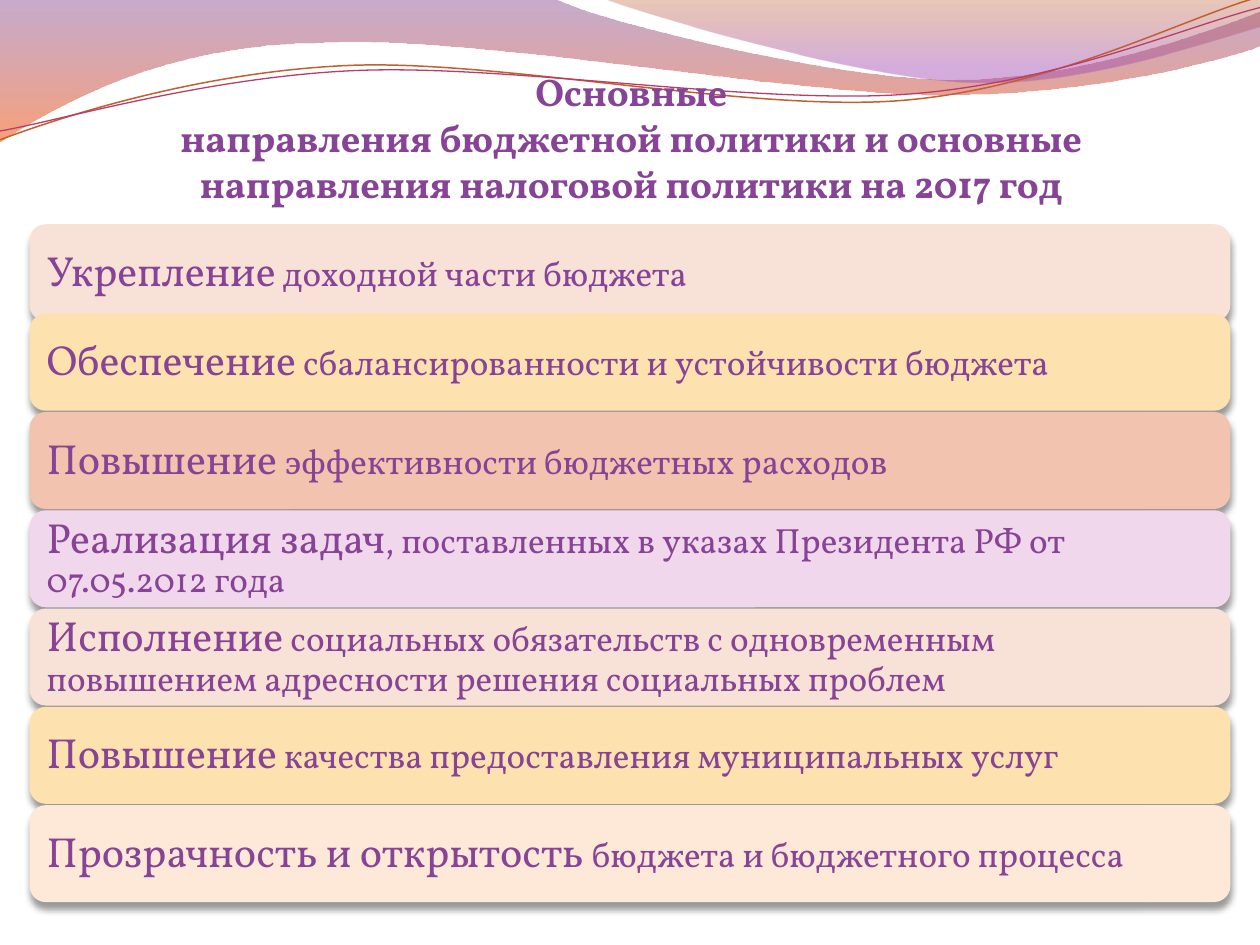
from lxml import etree
from pptx import Presentation
from pptx.dml.color import RGBColor
from pptx.enum.shapes import MSO_SHAPE as Shape
from pptx.enum.text import MSO_ANCHOR as Anchor, PP_ALIGN as Align
from pptx.oxml.ns import qn
from pptx.util import Inches, Pt

FONT = "Vollkorn"
PURPLE = RGBColor(0x87, 0x43, 0x96)
VIOLET = RGBColor(0x83, 0x45, 0x91)
ORANGE = RGBColor(0xF3, 0x53, 0x07)
RUST = RGBColor(0xB7, 0x49, 0x15)
ORCHID = RGBColor(0xA1, 0x4B, 0xB4)
COPPER = RGBColor(0xC4, 0x5F, 0x30)
RASPBERRY = RGBColor(0xB8, 0x3D, 0x68)
BLUSH = RGBColor(0xF8, 0xE2, 0xD7)
SAND = RGBColor(0xFD, 0xE2, 0xB0)
SALMON = RGBColor(0xF2, 0xC4, 0xAF)
LILAC = RGBColor(0xF1, 0xD7, 0xEC)
CREAM = RGBColor(0xFE, 0xE8, 0xD8)

TITLE = ("Основные\vнаправления бюджетной политики и основные "
         "направления налоговой политики на 2017 год")

# Emphasised opening, remainder, card colour
PRIORITIES = [
    ("Укрепление", " доходной части бюджета", BLUSH),
    ("Обеспечение", " сбалансированности и устойчивости бюджета", SAND),
    ("Повышение ", "эффективности бюджетных расходов", SALMON),
    ("Реализация задач", ", поставленных в указах Президента РФ от 07.05.2012 года", LILAC),
    ("Исполнение", " социальных обязательств с одновременным повышением "
                   "адресности решения социальных проблем", BLUSH),
    ("Повышение", " качества предоставления муниципальных услуг", SAND),
    ("Прозрачность и открытость ", "бюджета и бюджетного процесса", CREAM),
]

# Each outline: start point, then points (2 numbers) or Bezier curves (6 numbers).
# Gradient stops: position, colour, opacity in percent.
WAVE_BANDS = [
    ([(0, -0.01), (4.4, -0.01), (4.76, 0.17, 6.64, 0.63, 7.58, 0.63),
      (8.53, 0.63, 9.58, 0.26, 10, 0.09), (10.01, 0.36),
      (9.83, 0.44, 8.7, 0.76, 7.46, 0.75), (6.22, 0.75, 3.82, 0.28, 2.57, 0.34),
      (1.29, 0.35, 0.46, 0.83, -0.01, 1.13)],
     [(0, VIOLET, 45), (1, ORANGE, 55)]),
    ([(4.79, -0.01), (5.09, 0.11, 6.82, 0.62, 7.69, 0.65),
      (8.56, 0.69, 9.61, 0.32, 10, 0.21), (10, 0)],
     [(0, RUST, 30), (0.8, ORCHID, 45)]),
]
WAVE_LINES = [
    ([(0, 1.11), (0.48, 0.93, 1.58, 0.57, 2.77, 0.52),
      (3.95, 0.47, 5.93, 0.89, 7.13, 0.8), (8.33, 0.71, 9.38, 0.15, 9.98, -0.02)],
     COPPER, 0.85),
    ([(0, 1.04), (0.47, 0.96, 1.64, 0.61, 2.83, 0.56),
      (4.03, 0.51, 5.97, 0.83, 7.17, 0.75), (8.36, 0.67, 9.41, 0.21, 10, 0.06)],
     RASPBERRY, 0.75),
]

SLIDE_WIDTH, SLIDE_HEIGHT = 10, 7.5
CARD_WIDTH, CARD_HEIGHT = 9.53, 0.77
CARD_LEFT = (SLIDE_WIDTH - CARD_WIDTH) / 2
FIRST_TOP, SECOND_TOP, CARD_PITCH = 1.78, 2.49, 0.78


def add_outline(slide, outline, close):
    """Build a freeform through the end points, then bend its curved segments."""
    start, *ends = [(Inches(part[-2]), Inches(part[-1])) for part in outline]
    builder = slide.shapes.build_freeform(*start)
    builder.add_line_segments(ends, close=close)
    shape = builder.convert_to_shape()
    shape.shadow.inherit = False
    segments = list(shape.element.spPr.iter(qn("a:lnTo")))
    for segment, part in zip(segments, outline[1:]):
        if len(part) == 6:
            segment.addprevious(make_curve(shape, part))
            segment.getparent().remove(segment)
    return shape


def make_curve(shape, numbers):
    curve = etree.Element(qn("a:cubicBezTo"))
    for x, y in zip(numbers[::2], numbers[1::2]):
        etree.SubElement(curve, qn("a:pt"), x=str(Inches(x) - shape.left),
                         y=str(Inches(y) - shape.top))
    return curve


def set_opacity(color_element, percent):
    etree.SubElement(color_element, qn("a:alpha"), val=str(percent * 1000))


def add_wave_band(slide, outline, stops):
    shape = add_outline(slide, outline, close=True)
    shape.line.fill.background()
    shape.fill.gradient()
    shape.fill.gradient_angle = 270
    for stop, (position, color, _) in zip(shape.fill.gradient_stops, stops):
        stop.position = position
        stop.color.rgb = color
    colors = list(shape.element.spPr.iter(qn("a:srgbClr")))
    for element, (_, _, opacity) in zip(colors, stops):
        set_opacity(element, opacity)


def add_wave_line(slide, outline, color, width):
    shape = add_outline(slide, outline, close=False)
    shape.fill.background()
    shape.line.color.rgb = color
    shape.line.width = Pt(width)


def format_run(run, size, bold=False):
    for name, value in {"name": FONT, "size": Pt(size), "bold": bold}.items():
        setattr(run.font, name, value)
    run.font.color.rgb = PURPLE


def format_frame(frame, anchor, **margins):
    frame.word_wrap = True
    frame.vertical_anchor = anchor
    for side, value in margins.items():
        setattr(frame, f"margin_{side}", Inches(value))


def add_title(slide):
    box = slide.shapes.add_textbox(Inches(0.47), Inches(0.39), Inches(9.08), Inches(1.25))
    format_frame(box.text_frame, Anchor.BOTTOM, left=0, top=0.05, right=0, bottom=0)
    paragraph = box.text_frame.paragraphs[0]
    paragraph.text = TITLE
    paragraph.alignment = Align.CENTER
    for run in paragraph.runs:
        format_run(run, 22, bold=True)


def add_drop_shadow(shape):
    shape.shadow.inherit = False
    effects = shape.element.spPr.find(qn("a:effectLst"))
    shadow = etree.SubElement(effects, qn("a:outerShdw"), blurRad=str(Pt(4)),
                              dist=str(Pt(3.4)), dir="5400000", rotWithShape="0")
    set_opacity(etree.SubElement(shadow, qn("a:srgbClr"), val="000000"), 40)


def add_card(slide, top, lead, detail, color):
    card = slide.shapes.add_shape(Shape.ROUNDED_RECTANGLE, Inches(CARD_LEFT), Inches(top),
                                  Inches(CARD_WIDTH), Inches(CARD_HEIGHT))
    card.fill.solid()
    card.fill.fore_color.rgb = color
    card.line.fill.background()
    add_drop_shadow(card)
    format_frame(card.text_frame, Anchor.MIDDLE, left=0.1, top=0.1, right=0.1, bottom=0.1)
    paragraph = card.text_frame.paragraphs[0]
    paragraph.alignment = Align.LEFT
    paragraph.line_spacing = 0.9
    for text, size in ((lead, 24), (detail, 20)):
        run = paragraph.add_run()
        run.text = text
        format_run(run, size)


def main():
    presentation = Presentation()
    presentation.slide_width = Inches(SLIDE_WIDTH)
    presentation.slide_height = Inches(SLIDE_HEIGHT)
    slide = presentation.slides.add_slide(presentation.slide_layouts[6])
    for outline, stops in WAVE_BANDS:
        add_wave_band(slide, outline, stops)
    for outline, color, width in WAVE_LINES:
        add_wave_line(slide, outline, color, width)
    add_title(slide)
    for index, priority in enumerate(PRIORITIES):
        top = SECOND_TOP + (index - 1) * CARD_PITCH if index else FIRST_TOP
        add_card(slide, top, *priority)
    presentation.save("out.pptx")


if __name__ == "__main__":
    main()
